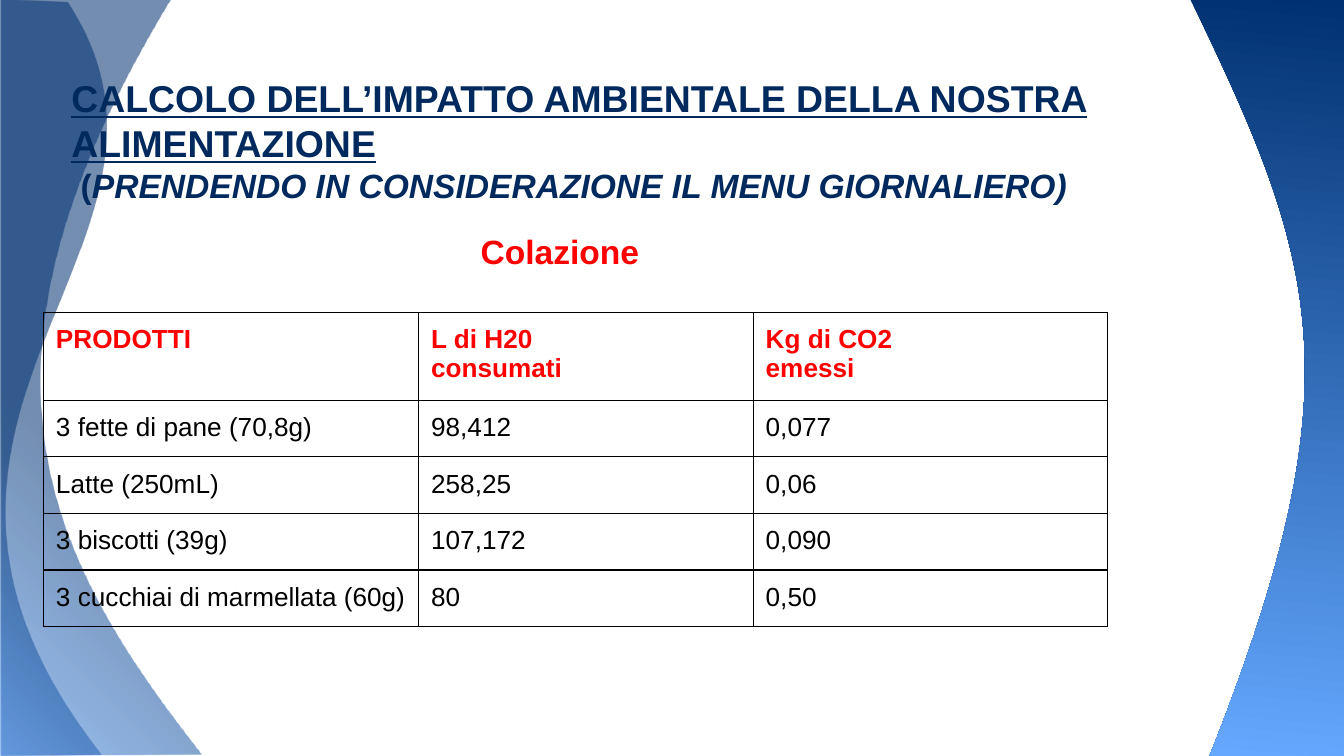
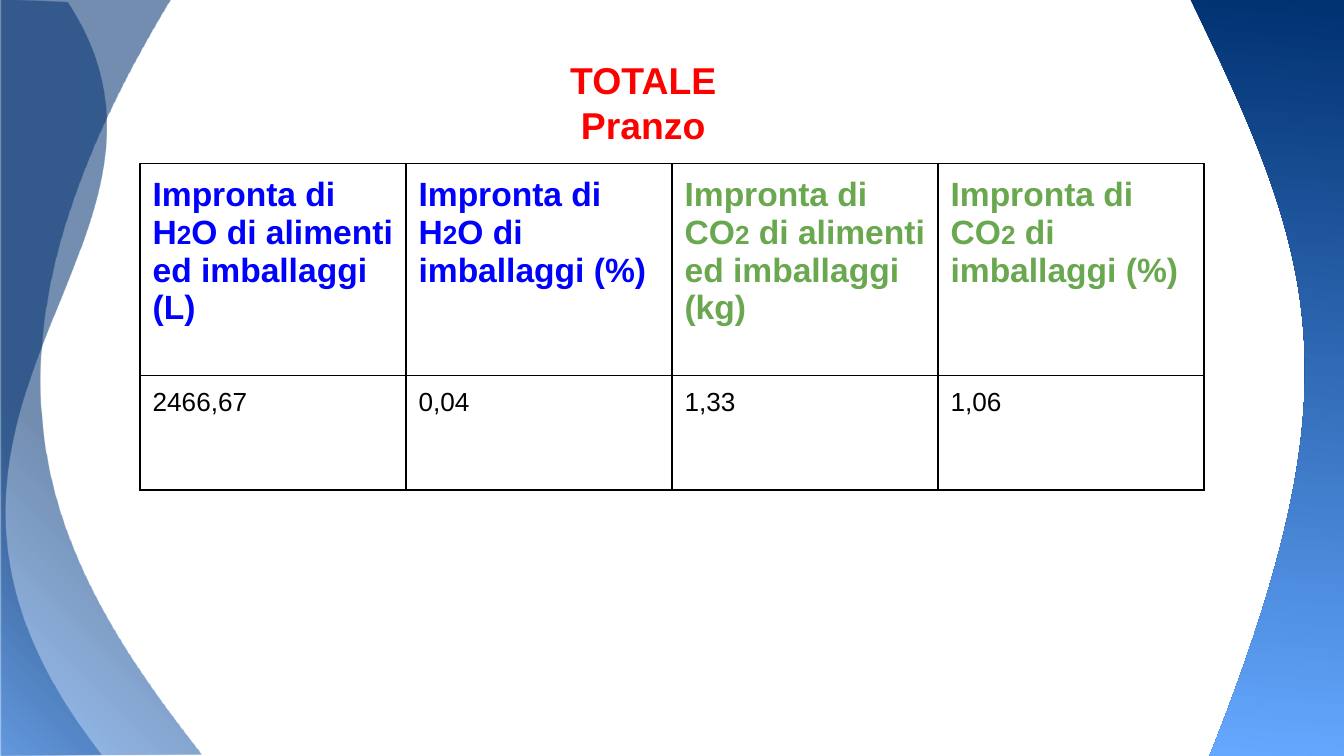
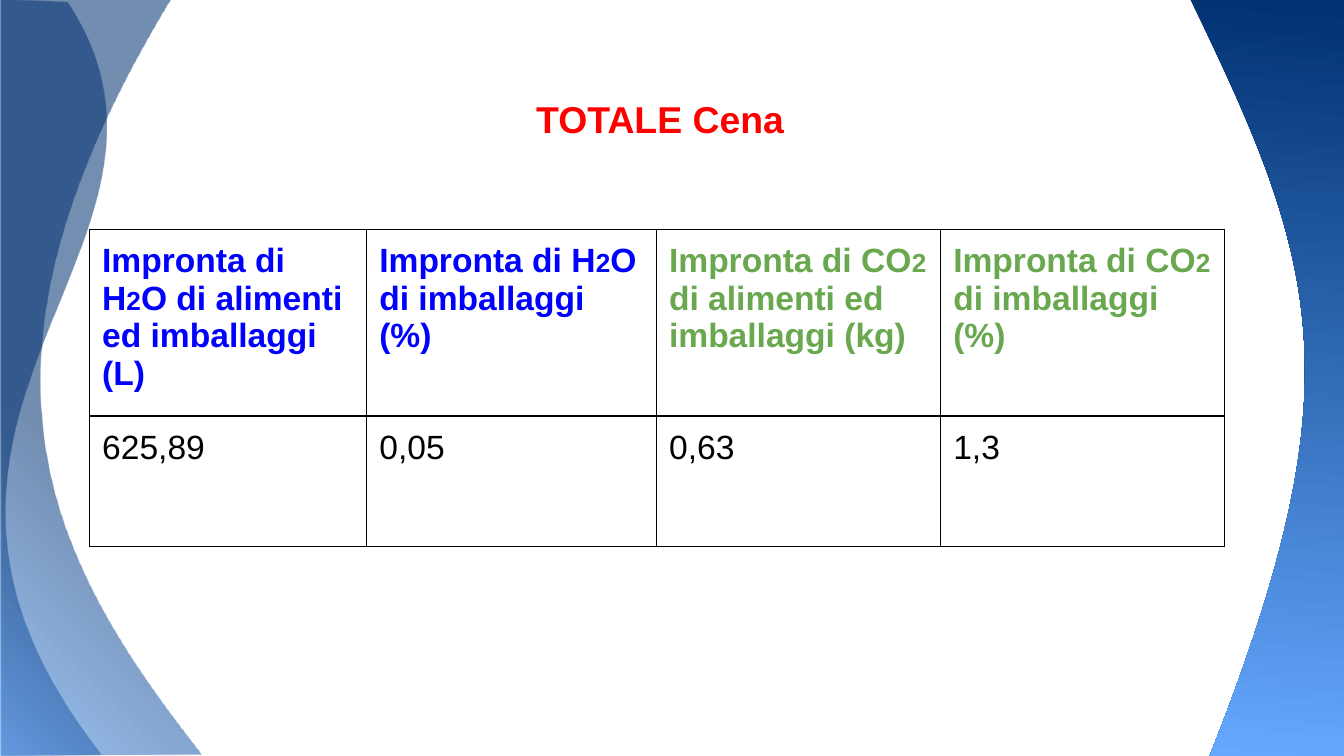
"""Build three slides on the environmental footprint of the daily menu."""
from lxml import etree
from pptx import Presentation
from pptx.dml.color import RGBColor
from pptx.enum.text import MSO_ANCHOR, MSO_AUTO_SIZE, PP_ALIGN
from pptx.oxml import parse_xml
from pptx.oxml.ns import nsdecls, qn
from pptx.util import Pt

PX = 9525
WIDTH, HEIGHT = 960, 540
INSET = 9
FONT = "Arial"
LEFT, CENTER = PP_ALIGN.LEFT, PP_ALIGN.CENTER
TOP = MSO_ANCHOR.TOP
FIXED, GROW = MSO_AUTO_SIZE.NONE, MSO_AUTO_SIZE.SHAPE_TO_FIT_TEXT

NAVY = RGBColor(0x00, 0x2A, 0x5E)
RED = RGBColor(0xFF, 0x00, 0x00)
BLUE = RGBColor(0x00, 0x00, 0xFF)
GREEN = RGBColor(0x6A, 0xA8, 0x4F)
BLACK = RGBColor(0x00, 0x00, 0x00)
BAND_DARK = RGBColor(0x00, 0x31, 0x71)
BAND_GLOW = RGBColor(0x54, 0x9F, 0xFF)
BAND_LIGHT = RGBColor(0x65, 0xA8, 0xFF)

GLOW_STOPS = [(0, BAND_GLOW, 54), (41, BAND_DARK, 54), (100, BAND_DARK, 54)]
GLOW_SHADE = '<a:path path="circle"><a:fillToRect t="100000" r="100000"/></a:path>'
SIDE_STOPS = [(0, BAND_DARK, 100), (100, BAND_LIGHT, 100)]
SIDE_SHADE = '<a:lin ang="5700000" scaled="0"/>'
BANDS = [
    ([(122, 0), (-36, 261), (32, 396), (144, 539), (-1, 540), (-1, -2)],
     GLOW_STOPS, GLOW_SHADE),
    ([(48, 2), (160, 175), (-117, 296), (72, 539), (1, 540), (1, 0)],
     GLOW_STOPS, GLOW_SHADE),
    ([(864, 540), (970, 273), (942, 188), (850, -1), (965, -1), (965, 540)],
     SIDE_STOPS, SIDE_SHADE),
]


def write(para, text, size=14, color=BLACK, bold=False, italic=False, underline=False):
    span = para.add_run()
    span.text = text
    font = span.font
    font.name, font.size, font.color.rgb = FONT, Pt(size), color
    font.bold, font.italic, font.underline = bold, italic, underline


def add_grid(page, left, top, widths, heights):
    frame = page.shapes.add_table(len(heights), len(widths), left * PX, top * PX,
                                  sum(widths) * PX, sum(heights) * PX)
    grid = frame.table
    grid.first_row = grid.horz_banding = False
    for column, width in zip(grid.columns, widths):
        column.width = width * PX
    for row, height in zip(grid.rows, heights):
        row.height = height * PX
    for cell in grid.iter_cells():
        cell.margin_left = cell.margin_right = INSET * PX
        cell.margin_top = cell.margin_bottom = INSET * PX
        cell.fill.background()
        for index, side in enumerate(("lnL", "lnR", "lnT", "lnB")):
            cell._tc.tcPr.insert(index, parse_xml(
                f'<a:{side} {nsdecls("a")} w="{PX}"><a:solidFill>'
                f'<a:srgbClr val="{BLACK}"/></a:solidFill></a:{side}>'))
    return grid


deck = Presentation()
deck.slide_width, deck.slide_height = WIDTH * PX, HEIGHT * PX
layout = deck.slide_layouts[5]
pages = [deck.slides.add_slide(layout) for _ in range(3)]
menu_page = pages[0]

for index, (points, stops, shade) in enumerate(BANDS):
    builder = menu_page.shapes.build_freeform(*points[0], scale=PX)
    builder.add_line_segments(points[1:], close=True)
    band = builder.convert_to_shape()
    band.shadow.inherit = False
    band.line.fill.background()
    outline = band.element.xpath(".//a:custGeom//a:path")[0]
    curve = etree.Element(qn("a:cubicBezTo"))
    for line in outline[1:4]:
        curve.append(line[0])
        outline.remove(line)
    outline.insert(1, curve)
    stop_xml = "".join(
        f'<a:gs pos="{place * 1000}"><a:srgbClr val="{color}">'
        f'<a:alpha val="{opacity * 1000}"/></a:srgbClr></a:gs>'
        for place, color, opacity in stops)
    band.element.xpath(".//a:custGeom")[0].addnext(parse_xml(
        f'<a:gradFill {nsdecls("a")} rotWithShape="1">'
        f'<a:gsLst>{stop_xml}</a:gsLst>{shade}</a:gradFill>'))
    band.element.xpath(".//p:cNvPr")[0].set("id", str(20 + index))
    layout.shapes.element.insert(2 + index, band.element)

TITLES = [
    ((42, 45, 858, 48), INSET, FIXED, LEFT),
    ((365, 36, 189, 74), 5, GROW, CENTER),
    ((374, 64, 295, 42), 5, GROW, LEFT),
]
for page, (place, inset, sizing, align) in zip(pages, TITLES):
    title = page.shapes.title
    title.left, title.top, title.width, title.height = [length * PX for length in place]
    frame = title.text_frame
    frame.word_wrap, frame.auto_size, frame.vertical_anchor = True, sizing, TOP
    frame.margin_left = frame.margin_right = INSET * PX
    frame.margin_top = frame.margin_bottom = inset * PX
    frame.paragraphs[0].alignment = align

frame = menu_page.shapes.title.text_frame
write(frame.paragraphs[0], "CALCOLO DELL’IMPATTO AMBIENTALE DELLA NOSTRA ALIMENTAZIONE",
      size=20, color=NAVY, bold=True, underline=True)
para = frame.add_paragraph()
para.alignment = LEFT
write(para, " (", size=18, color=NAVY, bold=True)
write(para, "PRENDENDO IN CONSIDERAZIONE IL MENU GIORNALIERO)",
      size=18, color=NAVY, bold=True, italic=True)

meal_box = menu_page.shapes.add_textbox(208 * PX, 156 * PX, 384 * PX, 48 * PX)
frame = meal_box.text_frame
frame.word_wrap = True
frame.margin_top = frame.margin_bottom = INSET * PX
frame.paragraphs[0].alignment = CENTER
write(frame.paragraphs[0], "Colazione", size=18, color=RED, bold=True)

BREAKFAST = [
    ("PRODOTTI", "L di H20\nconsumati", "Kg di CO2\nemessi"),
    ("3 fette di pane (70,8g)", "98,412", "0,077"),
    ("Latte (250mL)", "258,25", "0,06"),
    ("3 biscotti (39g)", "107,172", "0,090"),
    ("3 cucchiai di marmellata (60g)", "80", "0,50"),
]
grid = add_grid(menu_page, 31, 223, [268, 239, 253], [40] * len(BREAKFAST))
for row, texts in enumerate(BREAKFAST):
    header = row == 0
    for column, text in enumerate(texts):
        frame = grid.cell(row, column).text_frame
        for number, line in enumerate(text.split("\n")):
            para = frame.add_paragraph() if number else frame.paragraphs[0]
            write(para, line, color=RED if header else BLACK, bold=header)

FOOTPRINTS = [
    ("Impronta di H", "O di alimenti ed imballaggi (L)", BLUE),
    ("Impronta di H", "O di imballaggi (%)", BLUE),
    ("Impronta di CO", " di alimenti ed imballaggi (kg)", GREEN),
    ("Impronta di CO", " di imballaggi (%)", GREEN),
]
TOTALS = [
    ("TOTALE Pranzo", (100, 117), [190] * 4, [151, 82], 14,
     ["2466,67", "0,04", "1,33", "1,06"]),
    ("TOTALE Cena", (64, 164), [198, 207, 203, 203], [133, 93], 18,
     ["625,89", "0,05", "0,63", "1,3"]),
]
for page, (heading, corner, widths, heights, size, values) in zip(pages[1:], TOTALS):
    write(page.shapes.title.text_frame.paragraphs[0], heading, size=20, color=RED, bold=True)
    grid = add_grid(page, *corner, widths, heights)
    for column, ((start, end, color), value) in enumerate(zip(FOOTPRINTS, values)):
        para = grid.cell(0, column).text_frame.paragraphs[0]
        write(para, start, size=18, color=color, bold=True)
        write(para, "2", size=14, color=color, bold=True)
        write(para, end, size=18, color=color, bold=True)
        write(grid.cell(1, column).text_frame.paragraphs[0], value, size=size)

deck.save("out.pptx")
